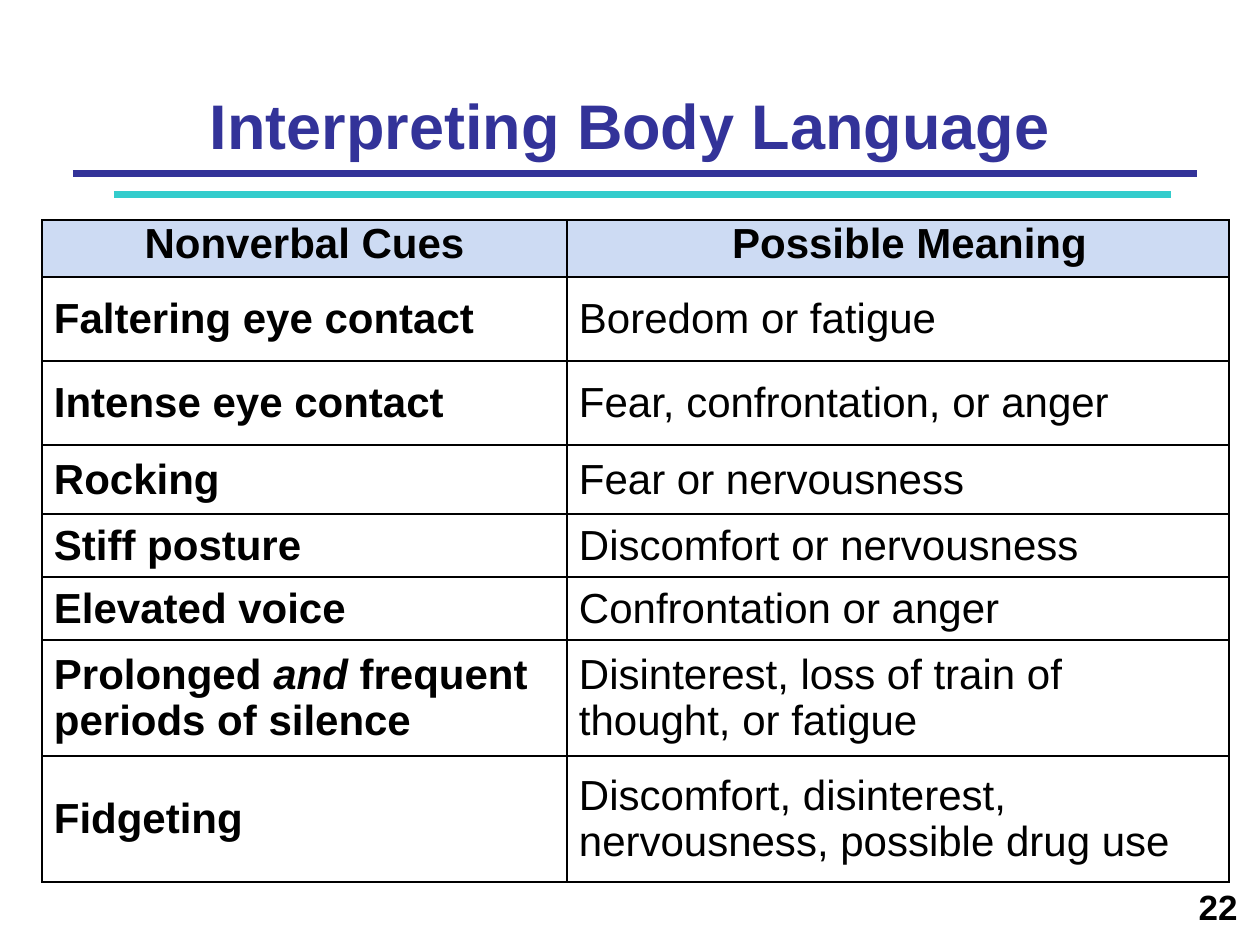
from pptx import Presentation
from pptx.dml.color import RGBColor
from pptx.enum.shapes import MSO_CONNECTOR
from pptx.enum.text import MSO_ANCHOR, PP_ALIGN
from pptx.oxml import parse_xml
from pptx.oxml.ns import nsdecls
from pptx.util import Emu, Pt
from lxml.etree import SubElement
from pptx.oxml.ns import qn

COLORS = {"navy": "333399", "teal": "33CCCC", "header": "CDDBF3", "black": "000000"}


def px(count):
    return Emu(round(count * 914400 / 126))


def style_text(paragraph, size, color, bold, align):
    paragraph.alignment = align
    for span in paragraph.runs:
        span.font.name = "Arial"
        span.font.size = Pt(size)
        span.font.bold = bold
        span.font.color.rgb = RGBColor.from_string(COLORS[color])


deck = Presentation()
deck.slide_width, deck.slide_height = px(1260), px(945)
page = deck.slides.add_slide(deck.slide_layouts[6])

for left, right, y, color in [(73, 1197, 174, "navy"), (114, 1171, 195, "teal")]:
    rule = page.shapes.add_connector(MSO_CONNECTOR.STRAIGHT, px(left), px(y), px(right), px(y))
    rule.line.color.rgb = RGBColor.from_string(COLORS[color])
    rule.line.width = Pt(4)
    SubElement(rule._element.spPr, qn("a:effectLst"))

labels = [
    ("Interpreting Body Language", (0, 0, 1260, 168), 36, "navy", PP_ALIGN.CENTER, MSO_ANCHOR.BOTTOM),
    ("22", (536, 879, 714, 66), 20, "black", PP_ALIGN.RIGHT, MSO_ANCHOR.TOP),
]
for text, place, size, color, align, anchor in labels:
    box = page.shapes.add_textbox(*map(px, place))
    box.text_frame.word_wrap = True
    box.text_frame.vertical_anchor = anchor
    box.text_frame.text = text
    style_text(box.text_frame.paragraphs[0], size, color, True, align)

rows = [
    (57, "Nonverbal Cues", "Possible Meaning"),
    (84, "Faltering eye contact", "Boredom or fatigue"),
    (84, "Intense eye contact", "Fear, confrontation, or anger"),
    (69, "Rocking", "Fear or nervousness"),
    (63, "Stiff posture", "Discomfort or nervousness"),
    (63, "Elevated voice", "Confrontation or anger"),
    (116, "Prolonged and frequent\nperiods of silence", "Disinterest, loss of train of\nthought, or fatigue"),
    (126, "Fidgeting", "Discomfort, disinterest,\nnervousness, possible drug use"),
]
widths = [525, 662]
height = sum(row[0] for row in rows)
table = page.shapes.add_table(len(rows), 2, px(42), px(220), px(sum(widths)), px(height)).table
table.first_row = table.horz_banding = False
for column, width in zip(table.columns, widths):
    column.width = px(width)

for r, (row_height, *texts) in enumerate(rows):
    table.rows[r].height = px(row_height)
    header = r == 0
    for c, text in enumerate(texts):
        cell = table.cell(r, c)
        cell.margin_top = cell.margin_right = cell.margin_bottom = 0
        cell.margin_left = px(23 * c if header else 12)
        cell.vertical_anchor = MSO_ANCHOR.TOP if header else MSO_ANCHOR.MIDDLE
        cell.text_frame.text = text
        for paragraph in cell.text_frame.paragraphs:
            before, emphasis, after = paragraph.text.partition(" and ")
            if emphasis:
                paragraph.text = before + " "
                paragraph.add_run().text = "and"
                paragraph.add_run().text = " " + after
                paragraph.runs[1].font.italic = True
            align = PP_ALIGN.CENTER if header else PP_ALIGN.LEFT
            style_text(paragraph, 24, "black", header or c == 0, align)
        properties = cell._tc.get_or_add_tcPr()
        for side in ("lnL", "lnR", "lnT", "lnB"):
            properties.append(parse_xml(
                f'<a:{side} {nsdecls("a")} w="12700"><a:solidFill>'
                f'<a:srgbClr val="{COLORS["black"]}"/></a:solidFill></a:{side}>'))
        if header:
            cell.fill.solid()
            cell.fill.fore_color.rgb = RGBColor.from_string(COLORS["header"])
        else:
            cell.fill.background()

deck.save("out.pptx")
